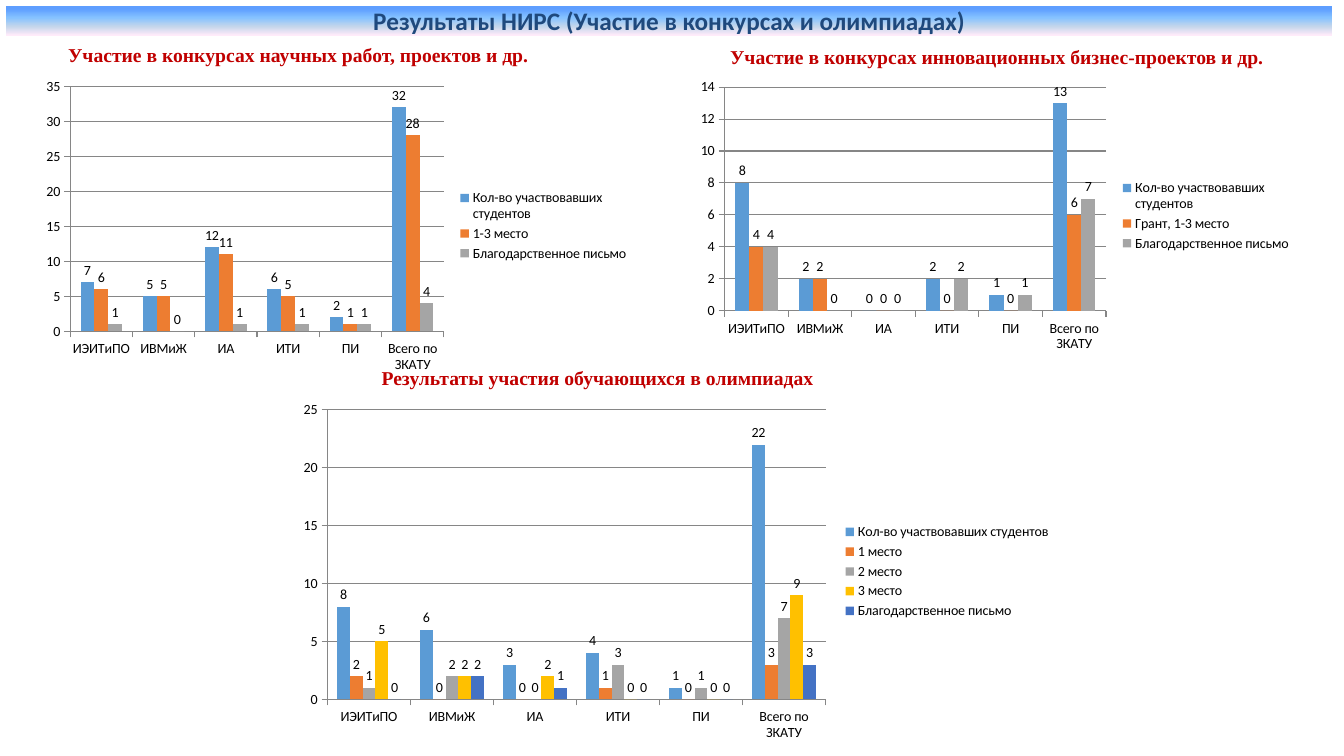
from lxml import etree
from pptx import Presentation
from pptx import util as u
from pptx.chart import data as chart_data
from pptx.dml.color import RGBColor
from pptx.enum import chart as ch
from pptx.enum import text
from pptx.oxml.ns import qn

NAVY = RGBColor(0x1F, 0x49, 0x7D)
RED = RGBColor(0xC0, 0x00, 0x00)
BLACK = RGBColor(0x00, 0x00, 0x00)
GREY = RGBColor(0x86, 0x86, 0x86)
SERIES_COLOURS = [
    RGBColor(0x5B, 0x9B, 0xD5), RGBColor(0xED, 0x7D, 0x31),
    RGBColor(0xA5, 0xA5, 0xA5), RGBColor(0xFF, 0xC0, 0x00),
    RGBColor(0x44, 0x72, 0xC4),
]
BANNER_STOPS = [
    (10, RGBColor(0x5E, 0x9E, 0xFF)), (40, RGBColor(0x85, 0xC2, 0xFF)),
    (70, RGBColor(0xC4, 0xD6, 0xEB)), (100, RGBColor(0xFF, 0xEB, 0xFA)),
]

BANNER_FONT = {"name": "Calibri", "size": u.Pt(18), "bold": True}
HEADING_FONT = {"name": "Times New Roman", "size": u.Pt(14), "bold": True}
CHART_FONT = {"name": "Calibri", "size": u.Pt(10), "bold": False}

INSTITUTES = ["ИЭИТиПО", "ИВМиЖ", "ИА", "ИТИ", "ПИ", "Всего по ЗКАТУ"]
STUDENTS = "Кол-во участвовавших студентов"
LETTER = "Благодарственное письмо"

# Each contest: heading and its box, chart box, axis top and step, series
CONTESTS = [
    ("Участие в конкурсах научных работ, проектов и др.",
     (12.2, 27.4, 401.8, 24.5), (24.5, 51.8, 432, 218.9), 35, 5,
     {STUDENTS: (7, 5, 12, 6, 2, 32),
      "1-3 место": (6, 5, 11, 5, 1, 28),
      LETTER: (1, 0, 1, 1, 1, 4)}),
    ("Участие в конкурсах инновационных бизнес-проектов и др.",
     (502.6, 28.8, 419, 24.5), (491.8, 52.6, 437.8, 203), 14, 2,
     {STUDENTS: (8, 2, 0, 2, 1, 13),
      "Грант, 1-3 место": (4, 2, 0, 0, 0, 6),
      LETTER: (4, 0, 0, 2, 1, 7)}),
    ("Результаты участия обучающихся в олимпиадах",
     (264.2, 257.8, 325.4, 24.5), (205.9, 282.2, 552.2, 252), 25, 5,
     {STUDENTS: (8, 6, 3, 4, 1, 22),
      "1 место": (2, 0, 0, 1, 0, 3),
      "2 место": (1, 2, 0, 3, 1, 7),
      "3 место": (5, 2, 2, 0, 0, 9),
      LETTER: (0, 2, 1, 0, 0, 3)}),
]


def in_points(box):
    return [u.Pt(length) for length in box]


def format_font(font, values, colour):
    for attribute, value in values.items():
        setattr(font, attribute, value)
    font.color.rgb = colour


def add_banner(slide, box, wording):
    """Title on a vertical blue-to-pink gradient."""
    banner = slide.shapes.title
    banner.left, banner.top, banner.width, banner.height = in_points(box)
    gradient = etree.SubElement(banner._element.spPr, qn("a:gradFill"), rotWithShape="1")
    stops = etree.SubElement(gradient, qn("a:gsLst"))
    for percent, colour in BANNER_STOPS:
        stop = etree.SubElement(stops, qn("a:gs"), pos=str(percent * 1000))
        etree.SubElement(stop, qn("a:srgbClr"), val=str(colour))
    etree.SubElement(gradient, qn("a:lin"), ang="5400000", scaled="0")

    frame = banner.text_frame
    frame.text = wording
    frame.auto_size = text.MSO_AUTO_SIZE.NONE
    frame.vertical_anchor = text.MSO_ANCHOR.MIDDLE
    frame.paragraphs[0].alignment = text.PP_ALIGN.CENTER
    format_font(frame.paragraphs[0].runs[0].font, BANNER_FONT, NAVY)


def add_heading(slide, box, wording):
    frame = slide.shapes.add_textbox(*in_points(box)).text_frame
    frame.word_wrap = True
    frame.text = wording
    frame.paragraphs[0].alignment = text.PP_ALIGN.CENTER
    format_font(frame.paragraphs[0].runs[0].font, HEADING_FONT, RED)


def add_results_chart(slide, box, top_value, step, results):
    """Clustered columns by institute with value labels."""
    numbers = chart_data.CategoryChartData()
    numbers.categories = INSTITUTES
    for name, values in results.items():
        numbers.add_series(name, values)
    chart = slide.shapes.add_chart(
        ch.XL_CHART_TYPE.COLUMN_CLUSTERED, *in_points(box), numbers).chart
    chart.has_title = False
    format_font(chart.font, CHART_FONT, BLACK)

    # Legend
    chart.has_legend = True
    chart.legend.position = ch.XL_LEGEND_POSITION.RIGHT
    chart.legend.include_in_layout = False

    # Axes
    for axis in (chart.category_axis, chart.value_axis):
        axis.major_tick_mark = ch.XL_TICK_MARK.OUTSIDE
        axis.format.line.color.rgb = GREY
    scale = {"minimum_scale": 0, "maximum_scale": top_value,
             "major_unit": step, "has_major_gridlines": True}
    for attribute, value in scale.items():
        setattr(chart.value_axis, attribute, value)
    chart.value_axis.major_gridlines.format.line.color.rgb = GREY

    # Columns and labels
    columns = chart.plots[0]
    columns.gap_width = 150
    columns.overlap = 0
    columns.vary_by_categories = False
    for series, colour in zip(columns.series, SERIES_COLOURS):
        series.invert_if_negative = False
        series.format.fill.solid()
        series.format.fill.fore_color.rgb = colour
        series.data_labels.show_value = True
        series.data_labels.position = ch.XL_LABEL_POSITION.OUTSIDE_END


def build_results_slide(deck):
    slide = deck.slides.add_slide(deck.slide_layouts[5])
    add_banner(slide, (4.3, 4.3, 947.5, 20.9),
               "Результаты НИРС (Участие в конкурсах и олимпиадах)")
    for heading, heading_box, chart_box, top_value, step, results in CONTESTS:
        add_results_chart(slide, chart_box, top_value, step, results)
        add_heading(slide, heading_box, heading)


def main():
    deck = Presentation()
    deck.slide_width, deck.slide_height = u.Pt(960), u.Pt(540)
    build_results_slide(deck)
    deck.save("out.pptx")


if __name__ == "__main__":
    main()
